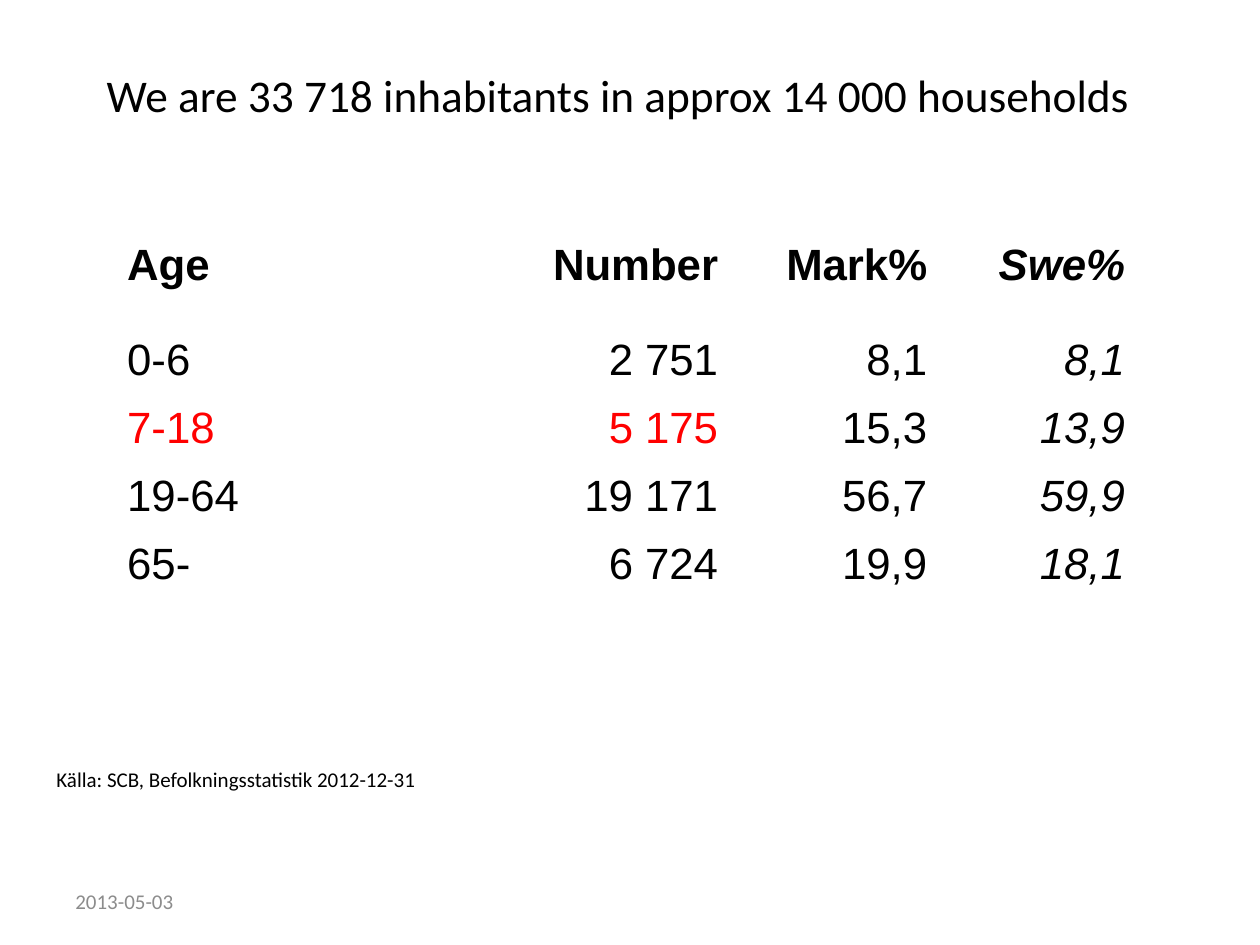
from dataclasses import dataclass

from pptx import Presentation
from pptx import util as u
from pptx.dml.color import RGBColor
from pptx.enum import text


@dataclass(frozen=True)
class Theme:
    black: RGBColor = RGBColor(0, 0, 0)
    red: RGBColor = RGBColor(255, 0, 0)
    grey: RGBColor = RGBColor(0x8C, 0x8C, 0x8C)
    text_font: str = "Calibri"
    table_font: str = "Arial"
    title_size: float = 25.9
    table_size: float = 25
    note_size: float = 12


THEME = Theme()
AGE_ROWS = [
    ["Age", "Number", "Mark%", "Swe%"],
    ["0-6", "2 751", "8,1", "8,1"],
    ["7-18", "5 175", "15,3", "13,9"],
    ["19-64", "19 171", "56,7", "59,9"],
    ["65-", "6 724", "19,9", "18,1"],
]
COLUMN_WIDTHS = [232.5, 119.5, 119.5, 113]
HEADER_HEIGHT, ROW_HEIGHT = 69.8, 38.9
HIGHLIGHTED_CELLS = {(2, 0), (2, 1)}


def style_font(paragraph, name, size, color):
    paragraph.font.name = name
    paragraph.font.size = u.Pt(size)
    paragraph.font.color.rgb = color


def add_text(slide, box, content, size, color=THEME.black,
             align=text.PP_ALIGN.LEFT, anchor=text.MSO_ANCHOR.TOP):
    shape = slide.shapes.add_textbox(*(u.Pt(length) for length in box))
    frame = shape.text_frame
    frame.word_wrap = True
    frame.vertical_anchor = anchor
    paragraph = frame.paragraphs[0]
    paragraph.text = content
    paragraph.alignment = align
    style_font(paragraph, THEME.text_font, size, color)


def add_age_table(slide, left, top):
    heights = [HEADER_HEIGHT] + [ROW_HEIGHT] * (len(AGE_ROWS) - 1)
    table = slide.shapes.add_table(
        len(heights), len(COLUMN_WIDTHS), u.Pt(left), u.Pt(top),
        u.Pt(sum(COLUMN_WIDTHS)), u.Pt(sum(heights))).table
    table.first_row = table.horz_banding = False
    for column, width in zip(table.columns, COLUMN_WIDTHS):
        column.width = u.Pt(width)
    for row, height in zip(table.rows, heights):
        row.height = u.Pt(height)
    for r, values in enumerate(AGE_ROWS):
        for c, value in enumerate(values):
            cell = table.cell(r, c)
            cell.fill.background()
            cell.vertical_anchor = text.MSO_ANCHOR.MIDDLE
            paragraph = cell.text_frame.paragraphs[0]
            paragraph.text = value
            paragraph.alignment = text.PP_ALIGN.RIGHT if c else text.PP_ALIGN.LEFT
            color = THEME.red if (r, c) in HIGHLIGHTED_CELLS else THEME.black
            style_font(paragraph, THEME.table_font, THEME.table_size, color)
            paragraph.font.bold = r == 0
            paragraph.font.italic = c == len(values) - 1


def main():
    presentation = Presentation()
    presentation.slide_width, presentation.slide_height = u.Pt(720), u.Pt(540)
    slide = presentation.slides.add_slide(presentation.slide_layouts[6])
    add_text(slide, (46.8, 34.6, 612.7, 64),
             "We are 33 718 inhabitants in approx 14 000 households",
             THEME.title_size, align=text.PP_ALIGN.CENTER)
    add_text(slide, (36, 500.5, 97, 28.8), "2013-05-03", THEME.note_size,
             THEME.grey, anchor=text.MSO_ANCHOR.MIDDLE)
    add_age_table(slide, 65.5, 116.6)
    add_text(slide, (25.2, 434.2, 311.8, 21.6),
             "Källa: SCB, Befolkningsstatistik 2012-12-31", THEME.note_size)
    presentation.save("out.pptx")


if __name__ == "__main__":
    main()
